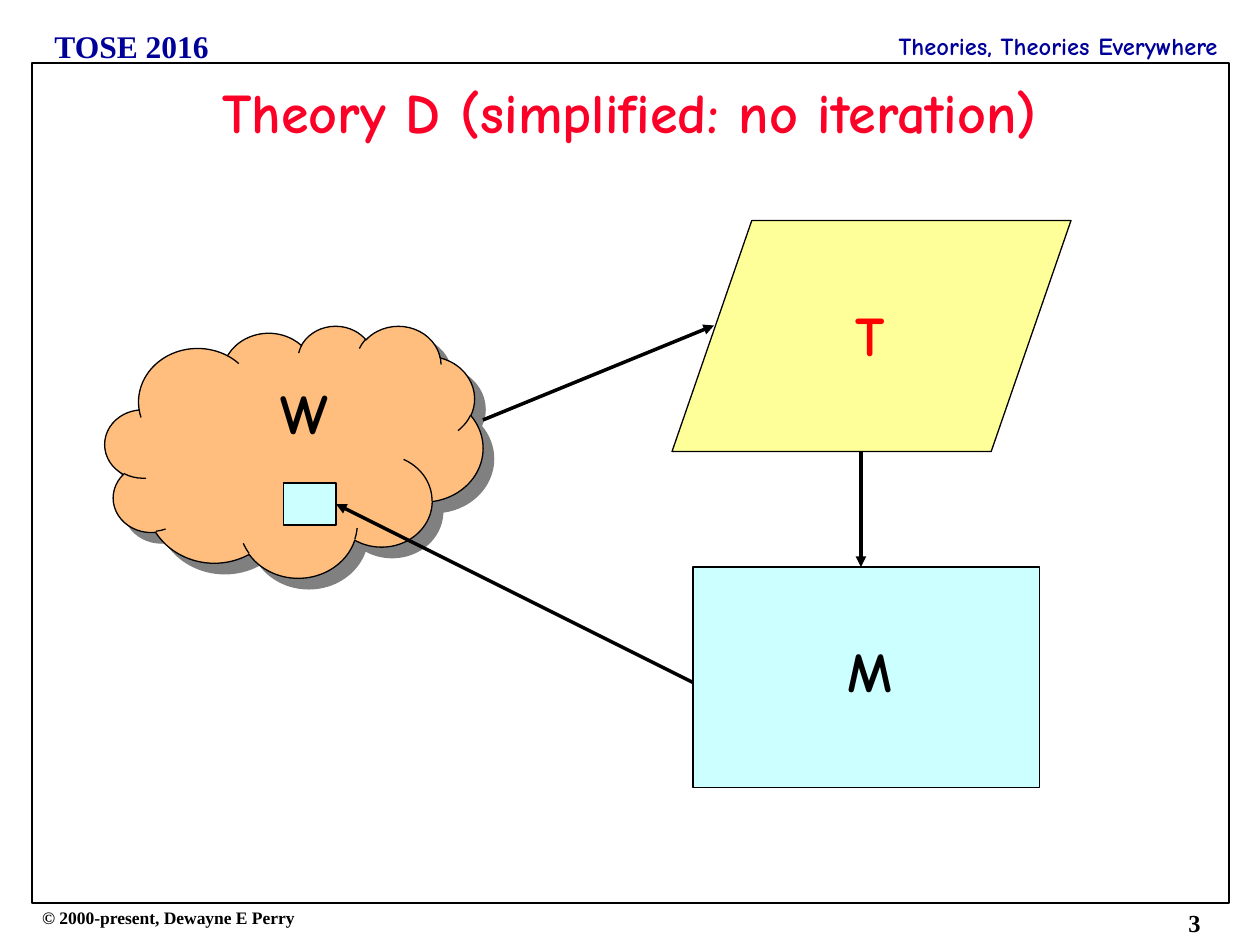
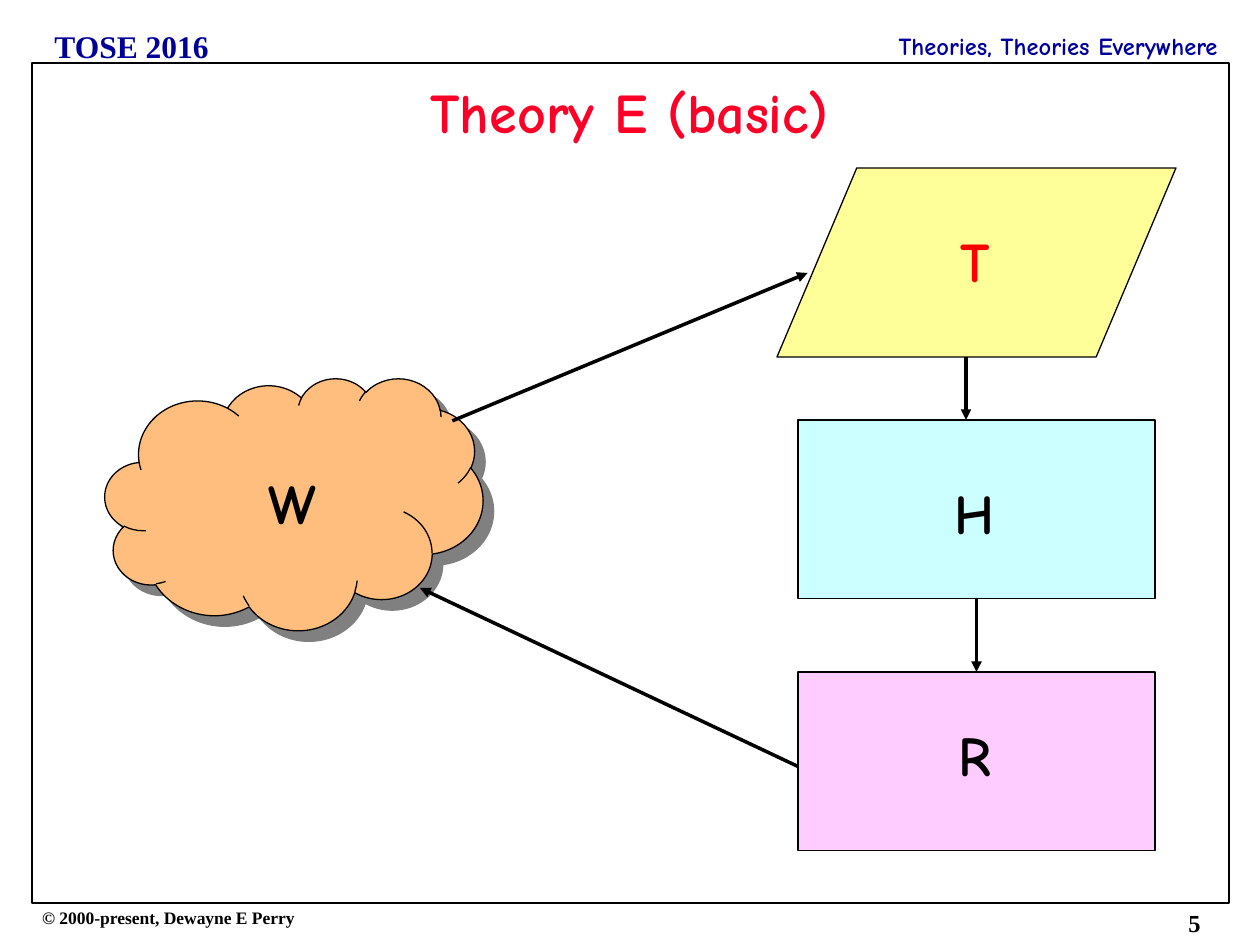
"""Build two slides that diagram Theory D and Theory E."""
from dataclasses import dataclass

from lxml.etree import SubElement
from pptx import Presentation
from pptx.dml.color import RGBColor
from pptx.enum.shapes import MSO_CONNECTOR, MSO_SHAPE
from pptx.enum.text import MSO_ANCHOR, PP_ALIGN
from pptx.oxml.ns import qn
from pptx.util import Pt


@dataclass(frozen=True)
class Theme:
    """Colours, fonts and type sizes of the deck."""
    ink: str = "000000"
    navy: str = "000099"
    title: str = "FC0128"
    theory: str = "FF0000"
    cloud: str = "FFBE7D"
    yellow: str = "FFFF99"
    cyan: str = "CCFFFF"
    pink: str = "FFCCFF"
    shadow: str = "808080"
    display_font: str = "Comic Neue"
    plain_font: str = "Times New Roman"
    large: float = 32
    course: float = 18
    small: float = 14
    tiny: float = 10
    outline: float = 0.75
    frame: float = 1
    arrow: float = 2


class Page:
    """Draw themed elements on the current slide."""

    def __init__(self, deck, theme):
        self.deck = deck
        self.theme = theme
        self.slide = None

    def start(self, title, number):
        theme = self.theme
        self.slide = self.deck.slides.add_slide(self.deck.slide_layouts[5])
        self.text("TOSE 2016", 24, 12, 120, 29, theme.course, theme.navy)
        self.text("Theories, Theories Everywhere", 336, 18, 360, 17, theme.small,
                  theme.navy, theme.display_font, PP_ALIGN.RIGHT, inset=False)
        self.text("© 2000-present, Dewayne E Perry", 17, 515, 200, 19, theme.tiny)
        self.text(str(number), 672, 515.5, 30, 24.5, theme.small)
        self.shape(MSO_SHAPE.RECTANGLE, 18.5, 36, 684, 480, None, theme.frame)
        self.title(title)

    def title(self, words):
        box = self.slide.shapes.title
        box.left, box.top, box.width, box.height = Pt(24), Pt(42), Pt(672), Pt(48)
        box.text_frame.vertical_anchor = MSO_ANCHOR.MIDDLE
        self.set_words(box, words, self.theme.large, self.theme.title,
                       self.theme.display_font, PP_ALIGN.CENTER)
        box.text_frame.paragraphs[0].line_spacing = 0.9

    def set_words(self, box, words, size, color, font, align):
        box.text_frame.text = words
        box.text_frame.word_wrap = True
        para = box.text_frame.paragraphs[0]
        para.alignment = align
        span = para.runs[0]
        span.font.name = font
        span.font.size = Pt(size)
        span.font.bold = True
        span.font.color.rgb = RGBColor.from_string(color)

    def text(self, words, left, top, width, height, size, color=None, font=None,
             align=PP_ALIGN.LEFT, inset=True):
        box = self.slide.shapes.add_textbox(Pt(left), Pt(top), Pt(width), Pt(height))
        self.set_words(box, words, size, color or self.theme.ink,
                       font or self.theme.plain_font, align)
        if not inset:
            frame = box.text_frame
            frame.margin_left = frame.margin_right = Pt(0)
            frame.margin_top = frame.margin_bottom = Pt(0)

    def label(self, letter, left, top, width=46, color=None):
        self.text(letter, left, top, width, 45, self.theme.large, color,
                  self.theme.display_font, PP_ALIGN.CENTER)

    def shape(self, kind, left, top, width, height, fill, weight=None):
        shape = self.slide.shapes.add_shape(
            kind, Pt(left), Pt(top), Pt(width), Pt(height))
        if fill:
            shape.fill.solid()
            shape.fill.fore_color.rgb = RGBColor.from_string(fill)
        else:
            shape.fill.background()
        shape.line.color.rgb = RGBColor.from_string(self.theme.ink)
        shape.line.width = Pt(weight or self.theme.outline)
        shape.shadow.inherit = False
        return shape

    def box(self, left, top, width, height, fill):
        self.shape(MSO_SHAPE.RECTANGLE, left, top, width, height, fill)

    def theory(self, left, top, height):
        self.shape(MSO_SHAPE.FLOWCHART_DATA, left, top, 228, height, self.theme.yellow)

    def world(self, top):
        cloud = self.shape(MSO_SHAPE.CLOUD, 60, top, 216, 144, self.theme.cloud)
        effects = cloud._element.spPr.find(qn("a:effectLst"))
        shadow = SubElement(effects, qn("a:outerShdw"), blurRad="0",
                            dist=str(Pt(8.5)), dir="2700000", algn="ctr",
                            rotWithShape="0")
        SubElement(shadow, qn("a:srgbClr"), val=self.theme.shadow)

    def arrow(self, start_x, start_y, end_x, end_y):
        line = self.slide.shapes.add_connector(
            MSO_CONNECTOR.STRAIGHT, Pt(start_x), Pt(start_y), Pt(end_x), Pt(end_y))
        line.line.color.rgb = RGBColor.from_string(self.theme.ink)
        line.line.width = Pt(self.theme.arrow)
        properties = line._element.spPr
        SubElement(properties.find(qn("a:ln")), qn("a:tailEnd"), type="triangle")
        SubElement(properties, qn("a:effectLst"))


def draw_theory_d(page):
    theme = page.theme
    page.start("Theory D (simplified: no iteration)", 3)
    page.box(396, 324, 198, 126, theme.cyan)
    page.world(186)
    page.theory(384, 126, 132)
    page.arrow(276, 240, 408, 186)
    page.box(162, 276, 30, 24, theme.cyan)
    page.arrow(396, 390, 192, 288)
    page.label("W", 144, 212.5, width=60)
    page.label("T", 474, 168, color=theme.theory)
    page.label("M", 474, 360)
    page.arrow(492, 258, 492, 324)


def draw_theory_e(page):
    theme = page.theme
    page.start("Theory E (basic)", 5)
    page.world(216)
    page.theory(444, 96, 108)
    page.label("W", 144, 264)
    page.label("T", 534, 126, color=theme.theory)
    for letter, top, label_top, fill in (("H", 240, 270, theme.cyan),
                                         ("R", 384, 408, theme.pink)):
        page.box(456, top, 204, 102, fill)
        page.label(letter, 534, label_top)
    page.arrow(258.5, 240.5, 461.5, 156)
    page.arrow(552, 204, 552, 240)
    page.arrow(558, 342, 558, 384)
    page.arrow(456, 438, 240, 336)


def main():
    deck = Presentation()
    deck.slide_width, deck.slide_height = Pt(720), Pt(540)
    page = Page(deck, Theme())
    draw_theory_d(page)
    draw_theory_e(page)
    deck.save("out.pptx")


if __name__ == "__main__":
    main()
